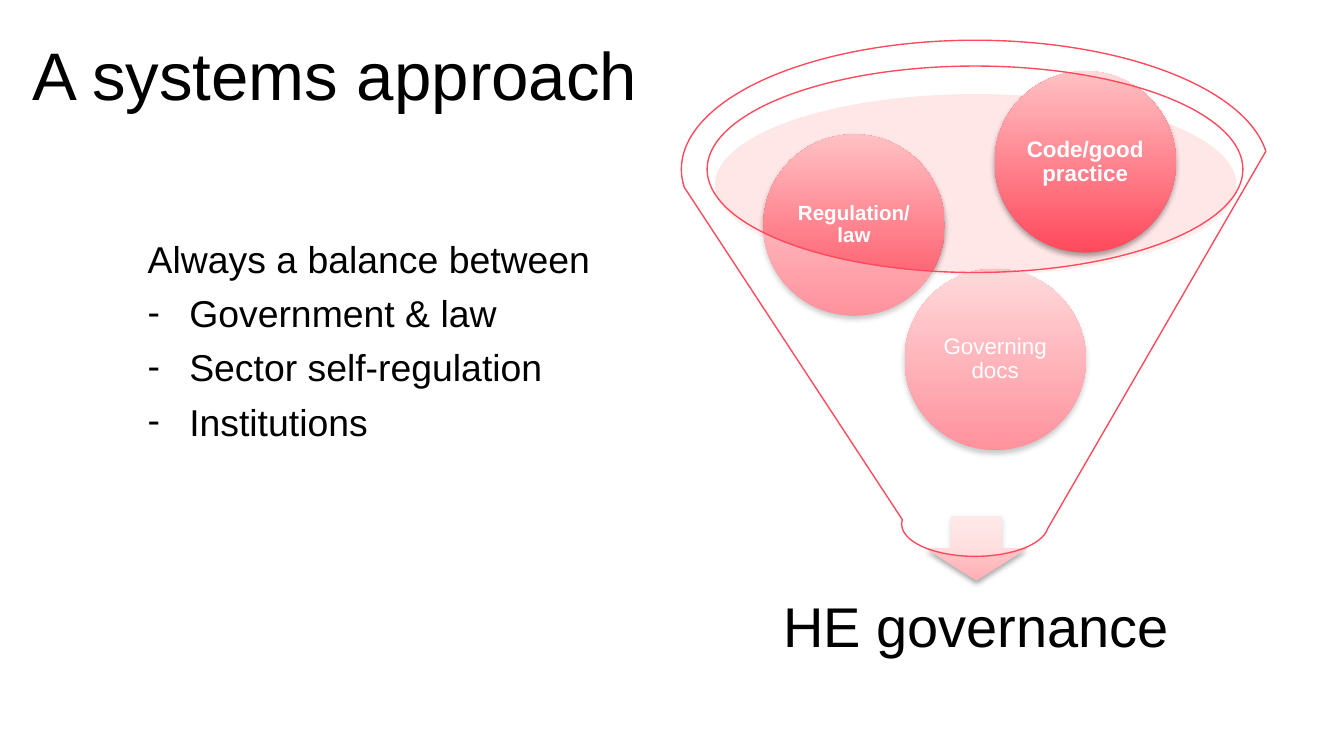
"""Build the slide 'A systems approach' with a funnel of governance sources."""
from lxml import etree
from pptx import Presentation
from pptx.dml.color import RGBColor
from pptx.enum.shapes import MSO_SHAPE
from pptx.enum.text import MSO_ANCHOR, MSO_AUTO_SIZE, PP_ALIGN
from pptx.oxml.ns import qn
from pptx.util import Inches, Pt

OVAL, ARROW, FUNNEL = MSO_SHAPE.OVAL, MSO_SHAPE.DOWN_ARROW, MSO_SHAPE.FUNNEL
MIDDLE, TOP = MSO_ANCHOR.MIDDLE, MSO_ANCHOR.TOP
LEFT, CENTER = PP_ALIGN.LEFT, PP_ALIGN.CENTER
NO_AUTOFIT = MSO_AUTO_SIZE.NONE

BLACK = RGBColor(0x00, 0x00, 0x00)
WHITE = RGBColor(0xFF, 0xFF, 0xFF)
RED = RGBColor(0xFF, 0x49, 0x5C)
PINK = RGBColor(0xFF, 0xC1, 0xC4)
ARROW_PINK = RGBColor(0xFF, 0xB1, 0xB5)
ARROW_PALE = RGBColor(0xFF, 0xDC, 0xDE)
OUTLINE = RGBColor(0xFE, 0x4A, 0x5D)

CIRCLE_SIZE = 1.35

prs = Presentation()
prs.slide_width = Inches(10)
prs.slide_height = prs.slide_width * 9 // 16
slide = prs.slides.add_slide(prs.slide_layouts[5])


def add_part(preset, box, colors, alpha=None):
    """Add a borderless shape: translucent with one color, shaded and shadowed with two."""
    part = slide.shapes.add_shape(preset, *map(Inches, box))
    part.shadow.inherit = False
    part.line.fill.background()
    properties = part._element.spPr
    if alpha:
        part.fill.solid()
        part.fill.fore_color.rgb = colors[0]
        color = next(properties.iter(qn("a:srgbClr")))
        etree.SubElement(color, qn("a:alpha"), val=str(alpha * 1000))
    else:
        part.fill.gradient()
        part.fill.gradient_angle = 90
        for stop, rgb in zip(part.fill.gradient_stops, colors):
            stop.color.rgb = rgb
        shadow = etree.SubElement(
            properties.find(qn("a:effectLst")), qn("a:outerShdw"),
            blurRad=str(Pt(3.1)), dist=str(Pt(1.8)), dir="5400000", rotWithShape="0")
        black = etree.SubElement(shadow, qn("a:srgbClr"), val="000000")
        etree.SubElement(black, qn("a:alpha"), val="35000")
    return part


def write(holder, lines, frame_format, font_format, align, spacing=None):
    """Fill a text holder with one paragraph per line and format it."""
    frame = holder.text_frame
    frame.text = "\n".join(lines)
    for name, value in {"word_wrap": True, "auto_size": NO_AUTOFIT, **frame_format}.items():
        setattr(frame, name, value)
    for paragraph in frame.paragraphs:
        paragraph.alignment = align
        paragraph.line_spacing = spacing
        font = paragraph.runs[0].font
        for name, value in {"name": "Arial", "color": BLACK, **font_format}.items():
            if name == "color":
                font.color.rgb = value
            else:
                setattr(font, name, value)


title = slide.shapes.title
title.left, title.top, title.width, title.height = map(Inches, (0.14, 0.08, 9, 0.94))
write(title, ["A systems approach"], {"vertical_anchor": MIDDLE}, {"size": Pt(36)}, LEFT)

balance = slide.shapes.add_textbox(*map(Inches, (0.5, 1.71, 9.15, 3.33)))
balance_lines = ["Always a balance between", "Government & law",
                 "Sector self-regulation", "Institutions"]
write(balance, balance_lines, {"vertical_anchor": TOP}, {"size": Pt(20)}, LEFT)
for index, paragraph in enumerate(balance.text_frame.paragraphs):
    layout = paragraph._p.get_or_add_pPr()
    layout.set("marL", str(Inches(0.81 if index else 0.5)))
    layout.set("indent", str(Inches(-0.31 if index else 0)))
    if index:
        paragraph.space_before = Pt(5)
        etree.SubElement(layout, qn("a:buFont"), typeface="Arial")
        etree.SubElement(layout, qn("a:buChar"), char="-")

add_part(OVAL, (5.32, 0.7, 3.88, 1.35), [PINK], alpha=40)
add_part(ARROW, (6.89, 3.84, 0.75, 0.48), [ARROW_PINK, ARROW_PALE])

outcome = slide.shapes.add_textbox(*map(Inches, (5.46, 4.23, 3.61, 0.9)))
write(outcome, ["HE governance"], {"vertical_anchor": MIDDLE}, {"size": Pt(30)}, CENTER, 0.9)

circle_frame = {"vertical_anchor": MIDDLE}
for side in ("left", "top", "right", "bottom"):
    circle_frame[f"margin_{side}"] = Inches(0.02)

for left, top, label, size, bold in [
    (6.73, 2, "Governing docs", 12, False),
    (5.68, 1, "Regulation/ law", 11, True),
    (7.4, 0.53, "Code/good practice", 12, True),
]:
    source = add_part(OVAL, (left, top, CIRCLE_SIZE, CIRCLE_SIZE), [RED, PINK])
    write(source, [label], circle_frame,
          {"size": Pt(size), "bold": bold, "color": WHITE}, CENTER, 0.9)

funnel = add_part(FUNNEL, (5.07, 0.3, 4.37, 3.84), [WHITE], alpha=40)
funnel.line.color.rgb = OUTLINE
funnel.line.width = Pt(0.75)

prs.save("out.pptx")
